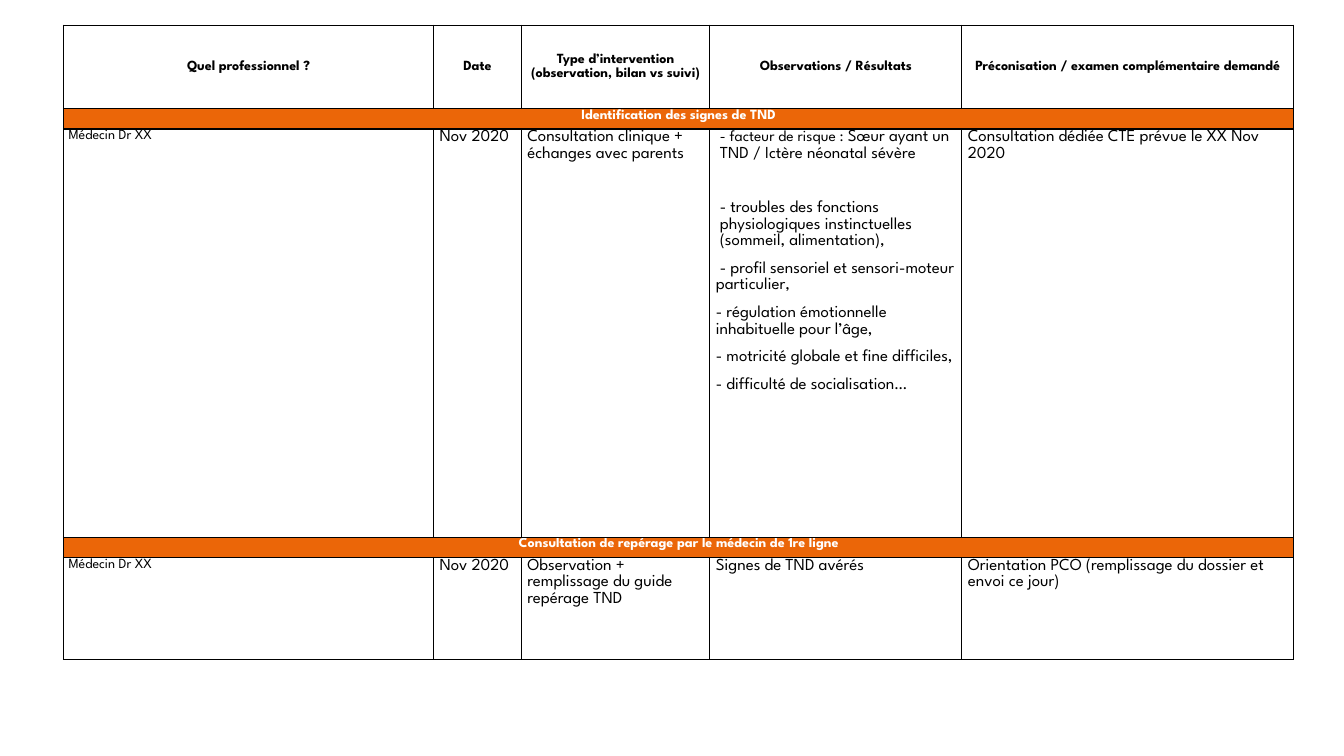
from lxml.etree import SubElement
from pptx import Presentation
from pptx.dml.color import RGBColor
from pptx.enum.text import MSO_ANCHOR, PP_ALIGN
from pptx.oxml.ns import qn
from pptx.util import Inches, Pt

BLACK, WHITE, ORANGE = "000000", "FFFFFF", "EB6608"

# Shares of the slide's size, in percent
LEFT, TOP = 4.73, 3.33
COLS = [27.53, 6.53, 14.03, 18.75, 24.68]
ROWS = [11.07, 2.67, 54, 2.67, 13.47]

HEADS = [
    "Quel professionnel ?",
    "Date",
    "Type d’intervention (observation, bilan vs suivi)",
    "Observations / Résultats",
    "Préconisation / examen complémentaire demandé",
]

# Each sign: runs as (text, size), left indent, first line indent, space after
SIGNS = [
    ([("- facteur de risque : ", 11),
      ("Sœur ayant un TND / Ictère néonatal sévère", 12)], 0.04, 0, 27),
    ([("- troubles des fonctions physiologiques instinctuelles "
       "(sommeil, alimentation),", 12)], 0.04, 0, 8),
    ([("- profil sensoriel et sensori-moteur particulier,", 12)], 0, 0.04, 8),
    ([("- régulation émotionnelle inhabituelle pour l’âge,", 12)], 0, 0, 8),
    ([("- motricité globale et fine difficiles,", 12)], 0, 0, 8),
    ([("- difficulté de socialisation…", 12)], 0, 0, 8),
]

BANDS = {
    1: "Identification des signes de TND",
    3: "Consultation de repérage par le médecin de 1re ligne",
}


def plain(text, size=12):
    return [([(text, size)], 0, 0, 8)]


VISITS = {
    2: [plain("Médecin Dr XX", 10), plain("Nov 2020"),
        plain("Consultation clinique + échanges avec parents"), SIGNS,
        plain("Consultation dédiée CTE prévue le XX Nov 2020")],
    4: [plain("Médecin Dr XX", 10), plain("Nov 2020"),
        plain("Observation + remplissage du guide repérage TND"),
        plain("Signes de TND avérés"),
        plain("Orientation PCO (remplissage du dossier et envoi ce jour)")],
}


def shade(code):
    return RGBColor.from_string(code)


def apply(item, form):
    for name, value in form.items():
        setattr(item, name, value)


class Sheet:
    face = "League Spartan"

    def __init__(self, deck):
        self.wide, self.high = deck.slide_width, deck.slide_height
        self.slide = deck.slides.add_slide(deck.slide_layouts[6])

    def across(self, share):
        return round(self.wide * share / 100)

    def down(self, share):
        return round(self.high * share / 100)

    def table(self, left, top, cols, rows):
        """Add a bare table with thin black rules on every cell."""
        grid = self.slide.shapes.add_table(
            len(rows), len(cols), self.across(left), self.down(top),
            self.across(sum(cols)), self.down(sum(rows))).table
        apply(grid, {"first_row": False, "horz_banding": False})
        for col, share in zip(grid.columns, cols):
            col.width = self.across(share)
        for row, share in zip(grid.rows, rows):
            row.height = self.down(share)
        for cell in grid.iter_cells():
            self.rule(cell)
            cell.fill.background()
        return grid

    def rule(self, cell):
        props = cell._tc.get_or_add_tcPr()
        for side in "LRTB":
            line = SubElement(props, qn(f"a:ln{side}"), w=str(Pt(1)))
            fill = SubElement(line, qn("a:solidFill"))
            SubElement(fill, qn("a:srgbClr"), val=BLACK)

    def label(self, cell, paras, color=BLACK, bold=False, align=PP_ALIGN.LEFT,
              anchor=MSO_ANCHOR.TOP, pad=0.06):
        apply(cell, {"margin_left": Inches(pad), "margin_right": Inches(pad),
                     "margin_top": 0, "margin_bottom": 0,
                     "vertical_anchor": anchor})
        frame = cell.text_frame
        for i, (runs, inset, first, after) in enumerate(paras):
            para = frame.add_paragraph() if i else frame.paragraphs[0]
            apply(para, {"alignment": align, "line_spacing": 1.07,
                         "space_after": Pt(after)})
            props = para._p.get_or_add_pPr()
            props.set("marL", str(Inches(inset)))
            props.set("indent", str(Inches(first)))
            for text, size in runs:
                run = para.add_run()
                run.text = text
                apply(run.font, {"name": self.face, "size": Pt(size),
                                 "bold": bold})
                run.font.color.rgb = shade(color)

    def band(self, grid, row, text):
        """Merge a whole row into one orange heading."""
        cell = grid.cell(row, 0)
        cell.merge(grid.cell(row, len(grid.columns) - 1))
        cell.fill.solid()
        cell.fill.fore_color.rgb = shade(ORANGE)
        self.label(cell, plain(text, 10), WHITE, True, PP_ALIGN.CENTER,
                   pad=0.05)


def main():
    deck = Presentation()
    apply(deck, {"slide_width": Inches(13.33), "slide_height": Inches(7.5)})
    sheet = Sheet(deck)
    grid = sheet.table(LEFT, TOP, COLS, ROWS)
    for col, text in enumerate(HEADS):
        sheet.label(grid.cell(0, col), plain(text, 10), bold=True,
                    align=PP_ALIGN.CENTER, anchor=MSO_ANCHOR.MIDDLE, pad=0.05)
    for row, text in BANDS.items():
        sheet.band(grid, row, text)
    for row, cells in VISITS.items():
        for col, paras in enumerate(cells):
            sheet.label(grid.cell(row, col), paras,
                        pad=0.06 if col else 0.05)
    deck.save("out.pptx")


if __name__ == "__main__":
    main()
